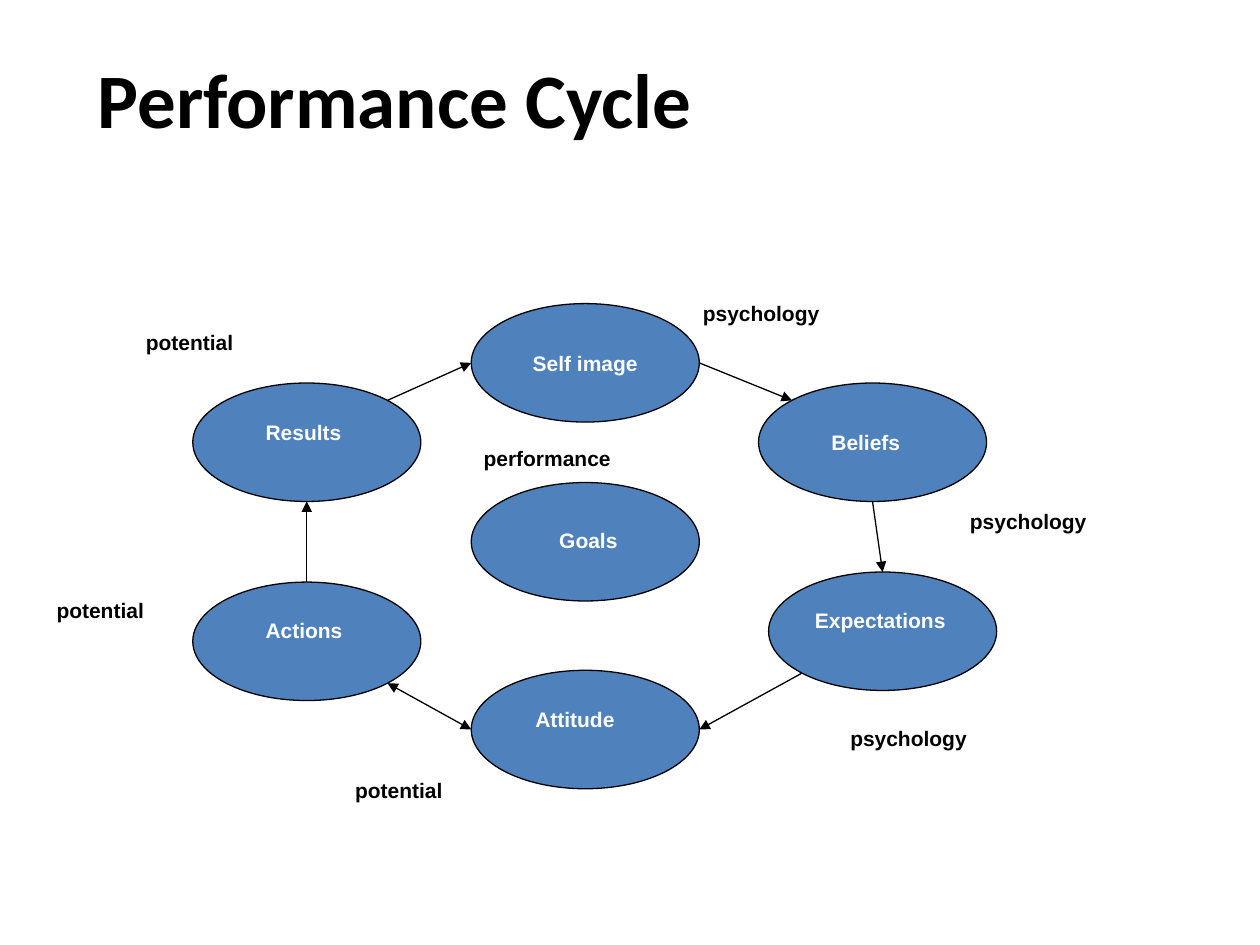
from math import cos, radians, sin
from typing import NamedTuple

from lxml import etree
from pptx import Presentation
from pptx.dml.color import RGBColor
from pptx.enum import shapes, text
from pptx.oxml.ns import qn
from pptx.util import Inches, Pt

BLACK = RGBColor(0x00, 0x00, 0x00)
WHITE = RGBColor(0xFF, 0xFF, 0xFF)
BLUE = RGBColor(0x4F, 0x81, 0xBD)
OVAL_W, OVAL_H = 1.81, 0.94
LINE = Pt(0.75)


class Stage(NamedTuple):
    name: str
    left: float
    top: float
    text_left: float
    text_top: float
    text_width: float


class Arrow(NamedTuple):
    """Angles run clockwise from the right side of each oval."""
    start: str
    start_angle: int
    end: str
    end_angle: int
    double: bool = False


class Note(NamedTuple):
    name: str
    left: float
    top: float
    width: float = 1.26


STAGES = [
    Stage("Actions", 1.53, 4.62, 2.01, 4.85, 1.1),
    Stage("Attitude", 3.74, 5.32, 4.15, 5.56, 1.1),
    Stage("Self image", 3.74, 2.41, 4.13, 2.73, 1.26),
    Stage("Goals", 3.74, 3.83, 4.34, 4.14, 0.87),
    Stage("Results", 1.53, 3.04, 2.01, 3.28, 0.95),
    Stage("Expectations", 6.1, 4.54, 6.37, 4.77, 1.47),
    Stage("Beliefs", 6.02, 3.04, 6.5, 3.36, 0.79),
]
ARROWS = [
    Arrow("Self image", 0, "Beliefs", 225),
    Arrow("Beliefs", 90, "Expectations", 270),
    Arrow("Expectations", 135, "Attitude", 0),
    Arrow("Attitude", 180, "Actions", 45, double=True),
    Arrow("Actions", 270, "Results", 90),
    Arrow("Results", 315, "Self image", 180),
]
NOTES = [
    Note("psychology", 7.6, 3.99),
    Note("potential", 1.06, 2.57, 1.34),
    Note("potential", 0.35, 4.69, 1.02),
    Note("psychology", 5.48, 2.34),
    Note("psychology", 6.65, 5.71),
    Note("potential", 2.72, 6.12),
    Note("performance", 3.74, 3.49),
]


def write(frame, words: str, *, size=12, font="Arial", color=BLACK,
          align=text.PP_ALIGN.LEFT) -> None:
    frame.word_wrap = True
    frame.vertical_anchor = text.MSO_ANCHOR.TOP
    para = frame.paragraphs[0]
    para.alignment = align
    run = para.add_run()
    run.text = words
    run.font.size = Pt(size)
    run.font.name = font
    run.font.bold = True
    run.font.color.rgb = color


def add_label(slide, words: str, left: float, top: float, width: float,
              color=BLACK) -> None:
    box = slide.shapes.add_textbox(
        Inches(left), Inches(top), Inches(width), Inches(0.3))
    write(box.text_frame, words, color=color)


def add_oval(slide, stage: Stage) -> None:
    oval = slide.shapes.add_shape(
        shapes.MSO_SHAPE.OVAL, Inches(stage.left), Inches(stage.top),
        Inches(OVAL_W), Inches(OVAL_H))
    oval.shadow.inherit = False
    oval.fill.solid()
    oval.fill.fore_color.rgb = BLUE
    oval.line.color.rgb = BLACK
    oval.line.width = LINE


def rim(stage: Stage, angle: int) -> tuple:
    """Return the point on the oval's edge at the given angle."""
    turn = radians(angle)
    return (Inches(stage.left + OVAL_W / 2 * (1 + cos(turn))),
            Inches(stage.top + OVAL_H / 2 * (1 + sin(turn))))


def add_arrow(slide, arrow: Arrow, stages: dict) -> None:
    line = slide.shapes.add_connector(
        shapes.MSO_CONNECTOR.STRAIGHT,
        *rim(stages[arrow.start], arrow.start_angle),
        *rim(stages[arrow.end], arrow.end_angle))
    line.line.color.rgb = BLACK
    line.line.width = LINE
    tips = ["a:headEnd", "a:tailEnd"] if arrow.double else ["a:tailEnd"]
    for tip in tips:
        etree.SubElement(line.line._get_or_add_ln(), qn(tip), type="triangle")
    etree.SubElement(line._element.spPr, qn("a:effectLst"))


def main() -> None:
    deck = Presentation()
    deck.slide_width, deck.slide_height = Inches(10), Inches(7.5)
    slide = deck.slides.add_slide(deck.slide_layouts[5])

    title = slide.shapes.title
    title.left, title.top = Inches(-0.1), Inches(0.36)
    title.width, title.height = Inches(6.47), Inches(0.56)
    title.text_frame.auto_size = text.MSO_AUTO_SIZE.NONE
    write(title.text_frame, "Performance Cycle", size=44, font="Calibri",
          align=text.PP_ALIGN.CENTER)

    for stage in STAGES:
        add_oval(slide, stage)
    for stage in STAGES:
        add_label(slide, stage.name, stage.text_left, stage.text_top,
                  stage.text_width, WHITE)
    stages = {stage.name: stage for stage in STAGES}
    for arrow in ARROWS:
        add_arrow(slide, arrow, stages)
    for note in NOTES:
        add_label(slide, *note)
    deck.save("out.pptx")


if __name__ == "__main__":
    main()
